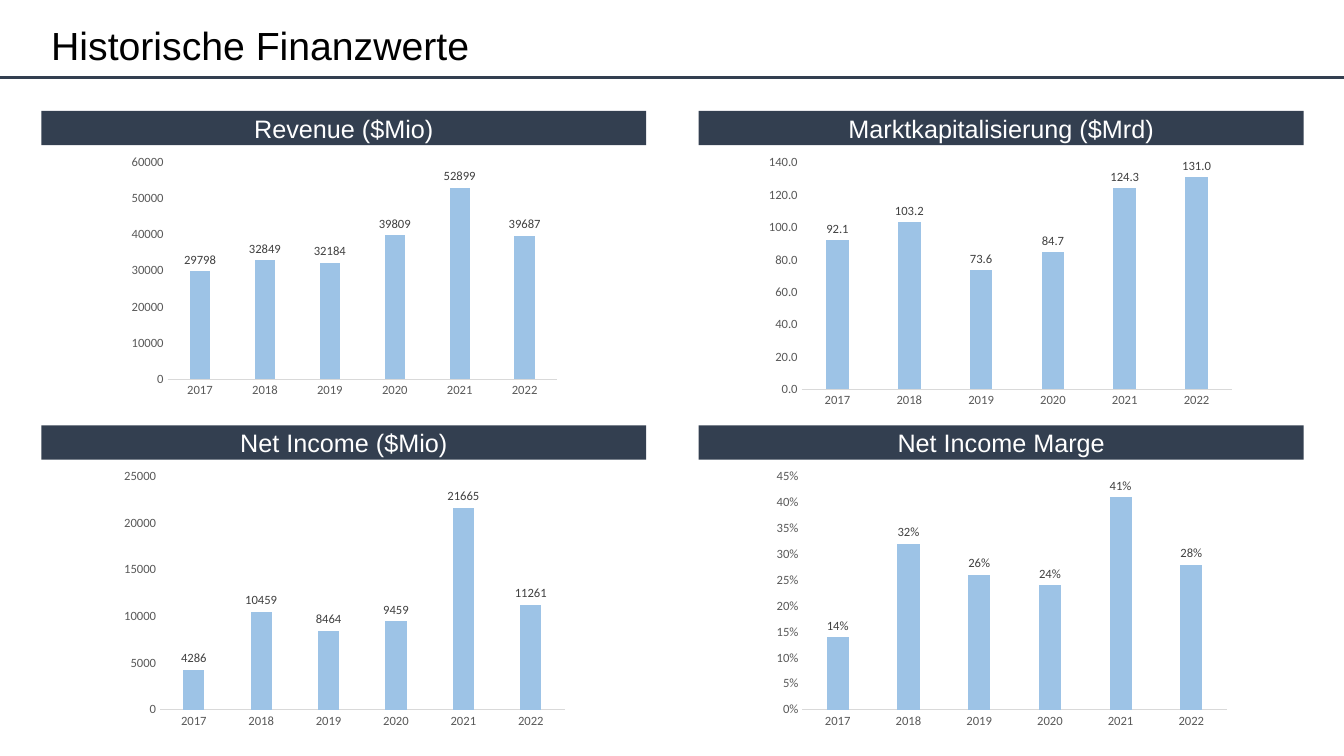
from dataclasses import dataclass
from typing import Optional

import lxml.etree
import pptx
import pptx.chart.data
import pptx.dml.color
import pptx.enum.chart
import pptx.enum.shapes
import pptx.enum.text
import pptx.oxml.ns
import pptx.util
from pptx.util import Inches

NAVY = pptx.dml.color.RGBColor(0x33, 0x3F, 0x50)
SKY = pptx.dml.color.RGBColor(0x9D, 0xC3, 0xE6)
BLACK = pptx.dml.color.RGBColor(0, 0, 0)
WHITE = pptx.dml.color.RGBColor(0xFF, 0xFF, 0xFF)
AXIS_TEXT = pptx.dml.color.RGBColor(0x59, 0x59, 0x59)
LABEL_TEXT = pptx.dml.color.RGBColor(0x40, 0x40, 0x40)
AXIS_LINE = pptx.dml.color.RGBColor(0xD9, 0xD9, 0xD9)

YEARS = ["2017", "2018", "2019", "2020", "2021", "2022"]
SLIDE_WIDTH = 13.33
MARGIN = 0.41
COLUMN_STEP = 6.52
FIRST_ROW = 1.1
ROW_STEP = 3.12


@dataclass(frozen=True)
class Box:
    left: float
    top: float
    width: float
    height: float


@dataclass(frozen=True)
class Metric:
    heading: str
    values: list[float]
    area: Box
    number_format: str
    maximum: float
    step: float
    plot: Optional[Box] = None


METRICS = [
    Metric("Revenue ($Mio)", [29798, 32849, 32184, 39809, 52899, 39687],
           Box(1.14, 1.47, 4.54, 2.63), "General", 60000, 10000,
           Box(0.115, 0.053, 0.851, 0.819)),
    Metric("Marktkapitalisierung ($Mrd)", [92.1, 103.2, 73.6, 84.7, 124.3, 131.0],
           Box(7.53, 1.49, 4.79, 2.61), "0.0", 140, 20),
    Metric("Net Income ($Mio)", [4286, 10459, 8464, 9459, 21665, 11261],
           Box(1.14, 4.6, 4.55, 2.68), "General", 25000, 5000),
    Metric("Net Income Marge", [0.14, 0.32, 0.26, 0.24, 0.41, 0.28],
           Box(7.61, 4.6, 4.65, 2.68), "0%", 0.45, 0.05),
]


def set_font(font, size: float, color, name: str) -> None:
    font.size = pptx.util.Pt(size)
    font.name = name
    font.color.rgb = color


def write(shape, text: str, size: float, color, align) -> None:
    frame = shape.text_frame
    frame.word_wrap = True
    frame.vertical_anchor = pptx.enum.text.MSO_ANCHOR.MIDDLE
    paragraph = frame.paragraphs[0]
    paragraph.alignment = align
    run = paragraph.add_run()
    run.text = text
    set_font(run.font, size, color, "Arial")


def add_title(slide) -> None:
    title = slide.shapes.add_textbox(
        Inches(MARGIN), Inches(0.18), Inches(12.5), Inches(0.59))
    write(title, "Historische Finanzwerte", 28, BLACK, pptx.enum.text.PP_ALIGN.LEFT)
    title.text_frame.paragraphs[0].line_spacing = 0.9


def add_heading(slide, text: str, left: float, top: float) -> None:
    band = slide.shapes.add_shape(
        pptx.enum.shapes.MSO_SHAPE.RECTANGLE,
        Inches(left), Inches(top), Inches(6), Inches(0.34))
    band.shadow.inherit = False
    band.fill.solid()
    band.fill.fore_color.rgb = NAVY
    band.line.fill.background()
    write(band, text, 18, WHITE, pptx.enum.text.PP_ALIGN.CENTER)


def place_plot(chart, plot: Box) -> None:
    qn = pptx.oxml.ns.qn
    plot_area = chart.element.find(".//" + qn("c:plotArea"))
    for old_layout in plot_area.findall(qn("c:layout")):
        plot_area.remove(old_layout)
    layout = lxml.etree.Element(qn("c:layout"))
    manual = lxml.etree.SubElement(layout, qn("c:manualLayout"))
    settings = [("layoutTarget", "inner"), ("xMode", "edge"), ("yMode", "edge"),
                ("x", plot.left), ("y", plot.top), ("w", plot.width), ("h", plot.height)]
    for tag, value in settings:
        lxml.etree.SubElement(manual, qn("c:" + tag)).set("val", str(value))
    plot_area.insert(0, layout)


def style_axis(axis) -> None:
    axis.has_major_gridlines = False
    axis.major_tick_mark = pptx.enum.chart.XL_TICK_MARK.NONE
    axis.minor_tick_mark = pptx.enum.chart.XL_TICK_MARK.NONE
    set_font(axis.tick_labels.font, 9, AXIS_TEXT, "Calibri")


def add_metric_chart(slide, metric: Metric) -> None:
    data = pptx.chart.data.CategoryChartData(number_format=metric.number_format)
    data.categories = YEARS
    data.add_series("Series 1", metric.values)
    area = metric.area
    chart = slide.shapes.add_chart(
        pptx.enum.chart.XL_CHART_TYPE.COLUMN_CLUSTERED,
        Inches(area.left), Inches(area.top), Inches(area.width), Inches(area.height),
        data).chart
    chart.has_title = False
    chart.has_legend = False
    set_font(chart.font, 10, BLACK, "Calibri")

    years = chart.category_axis
    style_axis(years)
    years.format.line.color.rgb = AXIS_LINE
    years.format.line.width = pptx.util.Pt(0.75)

    scale = chart.value_axis
    style_axis(scale)
    scale.format.line.fill.background()
    scale.minimum_scale = 0
    scale.maximum_scale = metric.maximum
    scale.major_unit = metric.step
    scale.tick_labels.number_format = metric.number_format
    scale.tick_labels.number_format_is_linked = False

    columns = chart.plots[0]
    columns.vary_by_categories = False
    columns.gap_width = 219
    columns.overlap = -27
    series = columns.series[0]
    series.format.fill.solid()
    series.format.fill.fore_color.rgb = SKY
    labels = series.data_labels
    labels.show_value = True
    labels.position = pptx.enum.chart.XL_LABEL_POSITION.OUTSIDE_END
    labels.number_format = metric.number_format
    labels.number_format_is_linked = False
    set_font(labels.font, 9, LABEL_TEXT, "Calibri")
    if metric.plot:
        place_plot(chart, metric.plot)


def add_title_rule(slide) -> None:
    rule = slide.shapes.add_connector(
        pptx.enum.shapes.MSO_CONNECTOR.STRAIGHT,
        Inches(0), Inches(0.77), Inches(SLIDE_WIDTH), Inches(0.77))
    rule.line.color.rgb = NAVY
    rule.line.width = pptx.util.Pt(2.25)
    properties = rule.element.find(pptx.oxml.ns.qn("p:spPr"))
    lxml.etree.SubElement(properties, pptx.oxml.ns.qn("a:effectLst"))


def main() -> None:
    presentation = pptx.Presentation()
    presentation.slide_width = Inches(SLIDE_WIDTH)
    presentation.slide_height = Inches(7.5)
    slide = presentation.slides.add_slide(presentation.slide_layouts[6])
    add_title(slide)
    for index, metric in enumerate(METRICS):
        row, column = divmod(index, 2)
        add_heading(slide, metric.heading,
                    MARGIN + column * COLUMN_STEP, FIRST_ROW + row * ROW_STEP)
    for metric in METRICS:
        add_metric_chart(slide, metric)
    add_title_rule(slide)
    presentation.save("out.pptx")


if __name__ == "__main__":
    main()
